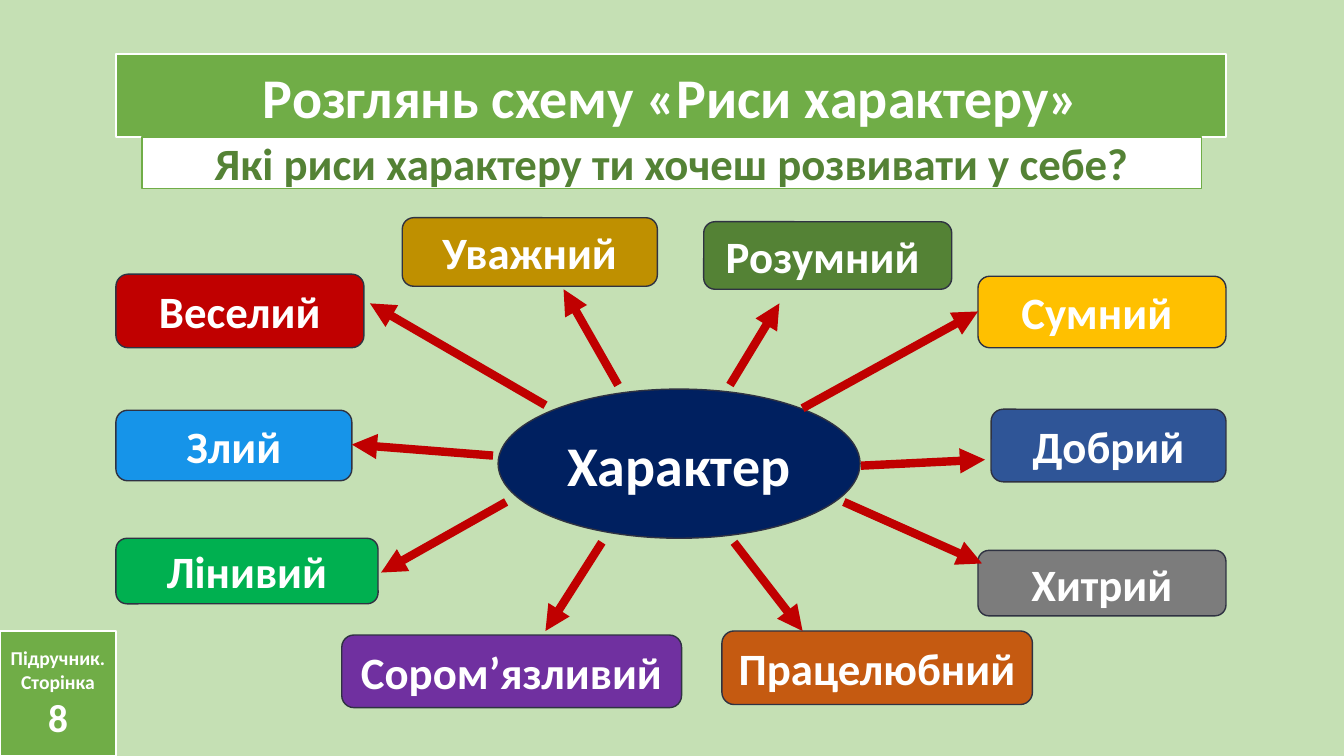
from lxml.etree import SubElement
from pptx import Presentation
from pptx.dml.color import RGBColor
from pptx.enum.shapes import MSO_CONNECTOR as Connector, MSO_SHAPE as Shape
from pptx.enum.text import MSO_ANCHOR as Anchor, MSO_AUTO_SIZE as AutoSize, PP_ALIGN as Align
from pptx.oxml.ns import qn
from pptx.util import Inches, Pt

GREEN, WHITE, RED, OUTLINE = "70AD47", "FFFFFF", "C00000", "2F3242"

TRAITS = [
    ("Уважний", "BF9000", (3.99, 2.16, 2.53, 0.68), (6.13, 3.82), (5.59, 2.87)),
    ("Сором’язливий", "7030A0", (3.39, 6.3, 3.37, 0.72), (5.97, 5.38), (5.41, 6.26)),
    ("Лінивий", "00B050", (1.15, 5.34, 2.6, 0.65), (5.02, 4.98), (3.78, 5.68)),
    ("Злий", "1694E9", (1.15, 4.07, 2.34, 0.7), (4.89, 4.52), (3.49, 4.41)),
    ("Працелюбний ", "C55A11", (7.16, 6.26, 3.08, 0.73), (7.28, 5.38), (7.96, 6.26)),
    ("Хитрий", "7C7C7C", (9.7, 5.46, 2.46, 0.65), (8.37, 4.98), (9.74, 5.59)),
    ("Добрий", "2F5597", (9.83, 4.06, 2.33, 0.72), (8.54, 4.62), (9.77, 4.56)),
    ("Сумний ", "FFC000", (9.7, 2.74, 2.46, 0.71), (7.96, 4.05), (9.7, 3.09)),
    ("Розумний ", "548235", (6.98, 2.2, 2.46, 0.67), (7.24, 3.82), (7.73, 3.01)),
    ("Веселий", RED, (1.15, 2.72, 2.46, 0.73), (5.41, 4.02), (3.67, 3.01)),
]


def color(value):
    return RGBColor.from_string(value)


class SlideBuilder:
    """Draws styled elements on the current slide."""

    font = "Calibri"

    def __init__(self, page, background):
        self.page = page
        page.background.fill.solid()
        page.background.fill.fore_color.rgb = color(background)

    def paint(self, box, fill, line, width):
        box.fill.solid()
        box.fill.fore_color.rgb = color(fill)
        box.line.color.rgb = color(line)
        box.line.width = Pt(width)

    def add_lines(self, box, lines, ink):
        frame = box.text_frame
        frame.word_wrap = True
        frame.auto_size = AutoSize.NONE
        frame.vertical_anchor = Anchor.MIDDLE
        for index, (text, size) in enumerate(lines):
            para = frame.add_paragraph() if index else frame.paragraphs[0]
            para.alignment = Align.CENTER
            span = para.add_run()
            span.text = text
            span.font.name = self.font
            span.font.size = Pt(size)
            span.font.bold = True
            span.font.color.rgb = color(ink)

    def title(self, place, text, size, fill):
        box = self.page.shapes.title
        box.left, box.top, box.width, box.height = map(Inches, place)
        self.paint(box, fill, WHITE, 1.5)
        self.add_lines(box, [(text, size)], WHITE)

    def panel(self, kind, place, lines, fill, line=OUTLINE, width=1, ink=WHITE):
        box = self.page.shapes.add_shape(kind, *map(Inches, place))
        box.shadow.inherit = False
        self.paint(box, fill, line, width)
        self.add_lines(box, lines, ink)

    def arrow(self, start, end):
        arrow = self.page.shapes.add_connector(Connector.STRAIGHT, *map(Inches, start + end))
        arrow.line.color.rgb = color(RED)
        arrow.line.width = Pt(6)
        outline = arrow._element.spPr.find(qn("a:ln"))
        SubElement(outline, qn("a:tailEnd"), type="triangle")
        SubElement(arrow._element.spPr, qn("a:effectLst"))


def main():
    deck = Presentation()
    deck.slide_width, deck.slide_height = Inches(13.33), Inches(7.5)
    builder = SlideBuilder(deck.slides.add_slide(deck.slide_layouts[5]), "C5E0B4")
    builder.title((1.15, 0.54, 11.01, 0.82), "Розглянь схему «Риси характеру»", 40, GREEN)
    builder.panel(Shape.OVAL, (4.94, 3.86, 3.59, 1.48), [("Характер", 40)], "002060")
    for name, fill, place, start, end in TRAITS:
        builder.panel(Shape.FLOWCHART_ALTERNATE_PROCESS, place, [(name, 32)], fill)
        builder.arrow(start, end)
    builder.panel(Shape.RECTANGLE, (0, 6.26, 1.15, 1.24),
                  [("Підручник.", 14), ("Сторінка", 14), ("8", 28)], GREEN, WHITE, 1.5)
    builder.panel(Shape.RECTANGLE, (1.41, 1.36, 10.51, 0.51),
                  [("Які риси характеру ти хочеш розвивати у себе?", 32)], WHITE, GREEN, ink="548235")
    deck.save("out.pptx")


if __name__ == "__main__":
    main()
